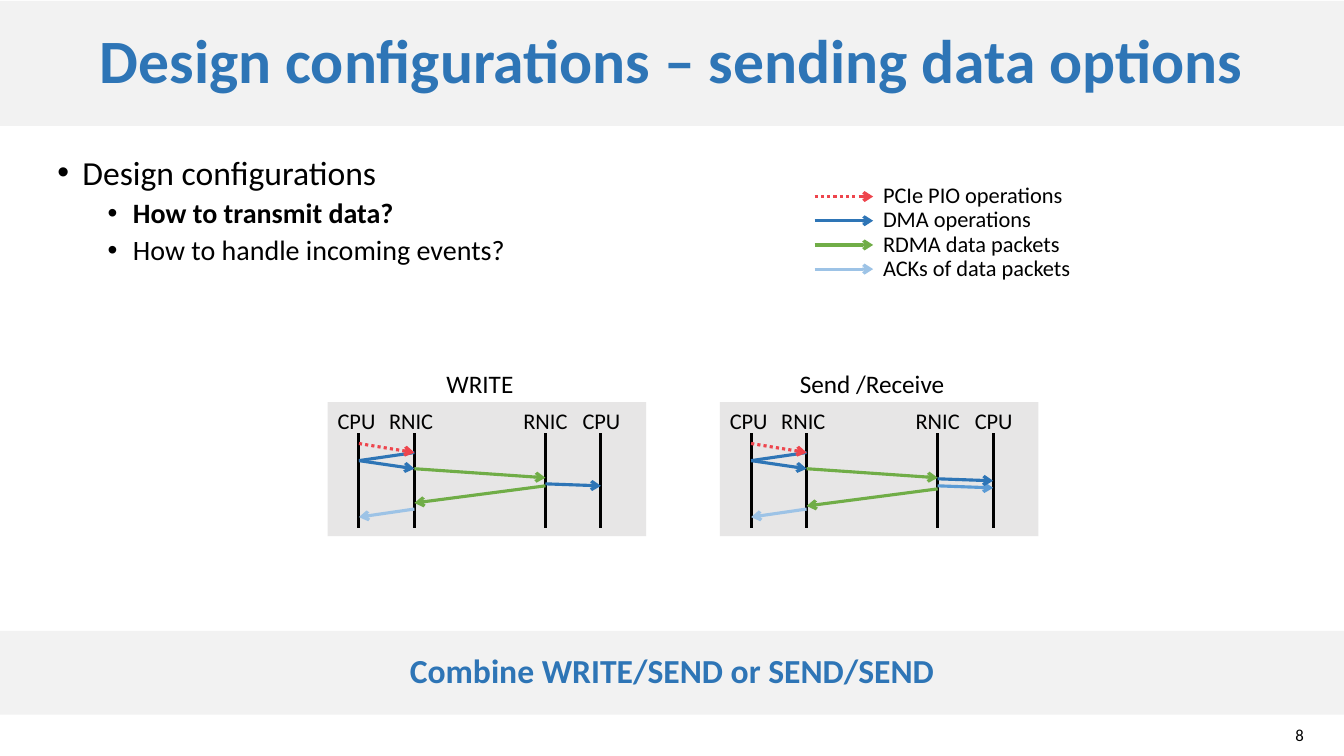
from lxml.etree import SubElement
from pptx import Presentation
from pptx.dml.color import RGBColor
from pptx.enum.dml import MSO_LINE
from pptx.enum.shapes import MSO_CONNECTOR, MSO_SHAPE
from pptx.enum.text import MSO_ANCHOR, MSO_AUTO_SIZE, PP_ALIGN
from pptx.oxml.ns import qn
from pptx.util import Inches, Pt

BLACK = RGBColor(0x00, 0x00, 0x00)
BAND = RGBColor(0xF2, 0xF2, 0xF2)
PANEL = RGBColor(0xE7, 0xE6, 0xE6)
BLUE = RGBColor(0x2E, 0x75, 0xB6)
MID_BLUE = RGBColor(0x5B, 0x9B, 0xD5)
PALE_BLUE = RGBColor(0x9D, 0xC3, 0xE6)
GREEN = RGBColor(0x70, 0xAD, 0x47)
RED = RGBColor(0xEE, 0x45, 0x4D)

LEFT, CENTER, RIGHT = PP_ALIGN.LEFT, PP_ALIGN.CENTER, PP_ALIGN.RIGHT
TOP, MIDDLE = MSO_ANCHOR.TOP, MSO_ANCHOR.MIDDLE

PANEL_TOP, PANEL_WIDTH, PANEL_HEIGHT = 3.99, 3.16, 1.33
LANES = (0.31, 0.86, 2.16, 2.71)
# text, offset from the panel's left side, width, alignment
LANE_LABELS = (
    ("CPU", 0, 0.7, LEFT),
    ("RNIC", 0.51, 0.81, LEFT),
    ("RNIC", 1.81, 0.7, CENTER),
    ("CPU", 2.31, 0.81, CENTER),
)
# start lane, start y, end lane, end y, colour, line format
SHARED_MESSAGES = (
    (1, 4.49, 0, 4.57, BLUE, {"arrow": False}),
    (0, 4.57, 1, 4.65, BLUE, {}),
    (1, 4.65, 2, 4.74, GREEN, {}),
    (1, 5.05, 0, 5.13, PALE_BLUE, {}),
    (0, 4.4, 1, 4.49, RED, {"dotted": True}),
)
WRITE_MESSAGES = (
    (2, 4.8, 3, 4.82, BLUE, {}),
    (2, 4.82, 1, 4.99, GREEN, {}),
)
SEND_MESSAGES = (
    (2, 4.82, 3, 4.84, MID_BLUE, {}),
    (2, 4.85, 1, 5.02, GREEN, {}),
    (2, 4.75, 3, 4.77, BLUE, {}),
)
LEGEND = (
    ("PCIe PIO operations", RED, True),
    ("DMA operations", BLUE, False),
    ("RDMA data packets", GREEN, False),
    ("ACKs of data packets", PALE_BLUE, False),
)


def apply(target, values):
    """Set every attribute named in values on target."""
    for name, value in values.items():
        setattr(target, name, value)


class Canvas:
    """Holds the slide, its text style and the shape collection being drawn on."""

    font = "Calibri"
    line_width = Pt(2.25)

    def __init__(self, slide):
        self.slide = slide
        self.shapes = slide.shapes

    def start_group(self):
        self.shapes = self.slide.shapes.add_group_shape().shapes

    def end_group(self):
        self.shapes = self.slide.shapes

    def add_text(self, paragraph, text, size, color=BLACK, bold=False, **layout):
        run = paragraph.add_run()
        run.text = text
        apply(run.font, {"name": self.font, "size": Pt(size), "bold": bold})
        run.font.color.rgb = color
        apply(paragraph, layout)

    def frame(self, shape, anchor):
        apply(shape.text_frame, {"word_wrap": True, "vertical_anchor": anchor,
                                 "auto_size": MSO_AUTO_SIZE.NONE})
        return shape.text_frame

    def title(self, text, left, top, width, height):
        shape = self.slide.shapes.title
        apply(shape, {"left": Inches(left), "top": Inches(top),
                      "width": Inches(width), "height": Inches(height)})
        self.fill(shape, BAND)
        self.add_text(self.frame(shape, MIDDLE).paragraphs[0], text, 44, BLUE, True,
                      alignment=CENTER, line_spacing=0.9)

    def fill(self, shape, color):
        shape.fill.solid()
        shape.fill.fore_color.rgb = color

    def box(self, left, top, width, height, color):
        shape = self.shapes.add_shape(MSO_SHAPE.RECTANGLE, Inches(left), Inches(top),
                                      Inches(width), Inches(height))
        shape.shadow.inherit = False
        self.fill(shape, color)
        shape.line.fill.background()
        return shape

    def label(self, text, left, top, width, height, size, alignment=LEFT, anchor=TOP):
        shape = self.shapes.add_textbox(Inches(left), Inches(top),
                                        Inches(width), Inches(height))
        self.add_text(self.frame(shape, anchor).paragraphs[0], text, size,
                      alignment=alignment)
        return shape

    def bullets(self, items, left, top, width, height):
        """Draw (text, level, bold) items as a two-level bulleted list."""
        shape = self.shapes.add_textbox(Inches(left), Inches(top),
                                        Inches(width), Inches(height))
        frame = self.frame(shape, TOP)
        for index, (text, level, bold) in enumerate(items):
            paragraph = frame.add_paragraph() if index else frame.paragraphs[0]
            self.add_text(paragraph, text, 20 if level else 24, bold=bold, level=level,
                          line_spacing=0.9, space_before=Pt(5 if level else 0))
            properties = paragraph._p.get_or_add_pPr()
            properties.set("marL", str(Inches(0.25 + 0.5 * level)))
            properties.set("indent", str(Inches(-0.25)))
            SubElement(properties, qn("a:buFont")).set("typeface", "Arial")
            SubElement(properties, qn("a:buChar")).set("char", "•")

    def line(self, x1, y1, x2, y2, color, arrow=True, dotted=False):
        connector = self.shapes.add_connector(MSO_CONNECTOR.STRAIGHT, Inches(x1),
                                              Inches(y1), Inches(x2), Inches(y2))
        connector.line.width = self.line_width
        connector.line.color.rgb = color
        if dotted:
            connector.line.dash_style = MSO_LINE.ROUND_DOT
        if arrow:
            SubElement(connector.line._get_or_add_ln(), qn("a:tailEnd")).set("type", "arrow")
        SubElement(connector._element.spPr, qn("a:effectLst"))
        return connector

    def sequence_panel(self, name, left, messages):
        """Draw a titled panel with four lifelines and the messages between them."""
        self.start_group()
        self.box(left, PANEL_TOP, PANEL_WIDTH, PANEL_HEIGHT, PANEL)
        for lane in LANES:
            self.line(left + lane, 4.3, left + lane, 5.24, BLACK, arrow=False)
        for text, offset, width, alignment in LANE_LABELS:
            self.label(text, left + offset, PANEL_TOP, width, 0.37, 16, alignment)
        for start, y1, end, y2, color, style in SHARED_MESSAGES + messages:
            self.line(left + LANES[start], y1, left + LANES[end], y2, color, **style)
        self.label(name, left + 0.61, 3.61, 1.8, 0.4, 18, CENTER)
        self.end_group()

    def legend(self, left, top, pitch):
        self.start_group()
        for index, (text, color, dotted) in enumerate(LEGEND):
            y = top + index * pitch
            entry = self.label(text, left + 0.58, y - 0.2, 2.5, 0.4, 16)
            arrow = self.line(left, y, left + 0.58, y, color, dotted=dotted)
            arrow.end_connect(entry, 1)
        self.end_group()


def main():
    presentation = Presentation()
    apply(presentation, {"slide_width": Inches(13.33), "slide_height": Inches(7.5)})
    canvas = Canvas(presentation.slides.add_slide(presentation.slide_layouts[5]))

    canvas.title("Design configurations – sending data options", 0, 0.01, 13.33, 1.24)
    canvas.bullets((("Design configurations", 0, False),
                    ("How to transmit data?", 1, True),
                    ("How to handle incoming events?", 1, False)),
                   0.47, 1.5, 12.36, 4.83)
    canvas.label("8", 11.96, 7.14, 1.07, 0.3, 12, RIGHT, MIDDLE)

    canvas.sequence_panel("WRITE", 3.25, WRITE_MESSAGES)
    canvas.sequence_panel("Send /Receive", 7.14, SEND_MESSAGES)

    conclusion = canvas.box(0, 6.26, 13.33, 0.83, BAND)
    canvas.add_text(canvas.frame(conclusion, MIDDLE).paragraphs[0],
                    "Combine WRITE/SEND or SEND/SEND", 24, BLUE, True,
                    alignment=CENTER, line_spacing=0.9)
    canvas.legend(8.08, 1.95, 0.24)

    presentation.save("out.pptx")


if __name__ == "__main__":
    main()
